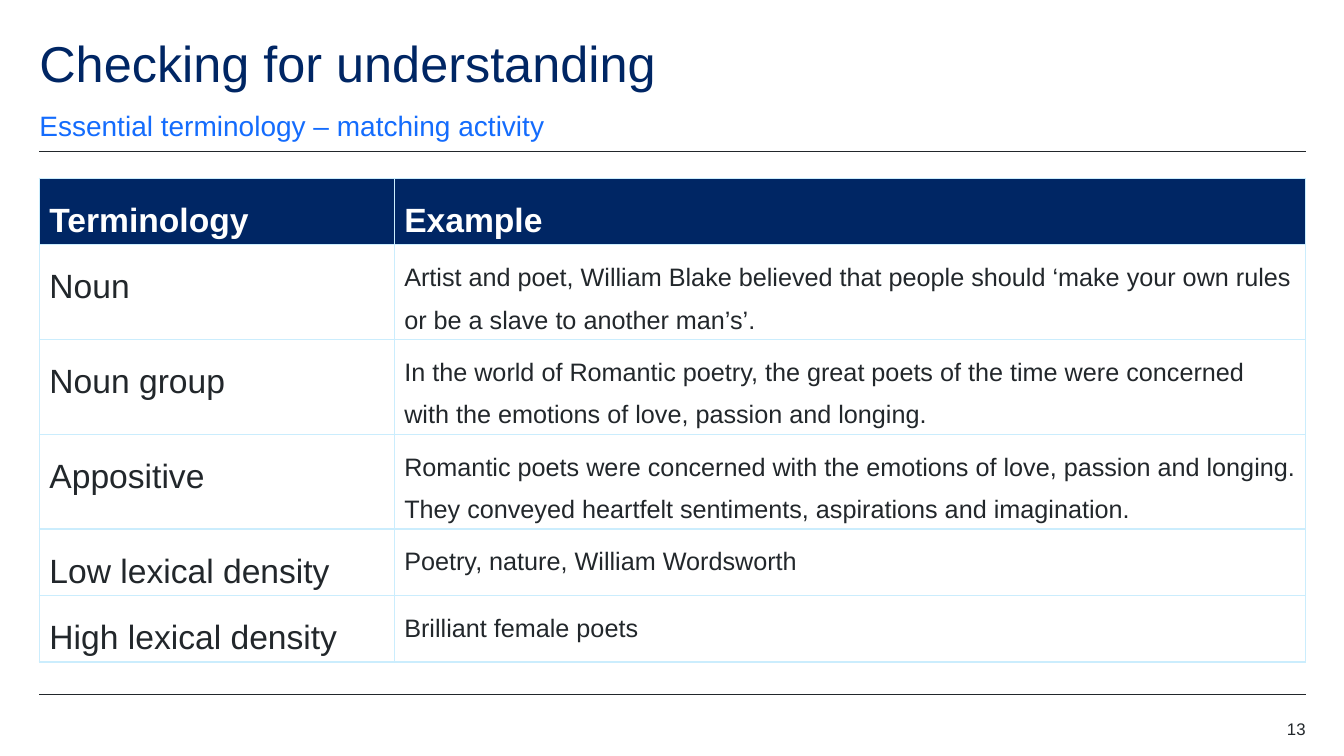
from dataclasses import dataclass

from lxml.etree import SubElement
from pptx import Presentation
from pptx.dml.color import RGBColor
from pptx.enum.text import MSO_ANCHOR, MSO_AUTO_SIZE, PP_ALIGN
from pptx.oxml.ns import qn
from pptx.util import Inches, Pt


@dataclass(frozen=True)
class Theme:
    """Colours, font and type sizes of the slide."""

    font: str = "Arial"
    navy: str = "002664"
    blue: str = "146CFD"
    ink: str = "22272B"
    white: str = "FFFFFF"
    border: str = "CBEDFD"
    title_size: int = 36
    term_size: int = 24
    subtitle_size: int = 20
    example_size: int = 18
    number_size: int = 12


THEME = Theme()
LEFT, WIDTH = 0.39, 12.56
TERM_WIDTH = 3.52
ROW_HEIGHTS = [0.65, 0.94, 0.94, 0.94, 0.66, 0.66]
TERMS = [
    ("Terminology", "Example"),
    ("Noun", "Artist and poet, William Blake believed that people should "
     "‘make your own rules or be a slave to another man’s’."),
    ("Noun group", "In the world of Romantic poetry, the great poets of the time "
     "were concerned with the emotions of love, passion and longing."),
    ("Appositive", "Romantic poets were concerned with the emotions of love, passion "
     "and longing. They conveyed heartfelt sentiments, aspirations and imagination."),
    ("Low lexical density", "Poetry, nature, William Wordsworth"),
    ("High lexical density", "Brilliant female poets"),
]


def write(frame, text, size, color, bold=False, align=PP_ALIGN.LEFT, spacing=None, after=0):
    """Fill a text frame with one formatted paragraph."""
    frame.text = text
    frame.word_wrap = True
    paragraph = frame.paragraphs[0]
    paragraph.alignment = align
    paragraph.line_spacing = spacing
    paragraph.space_before = Pt(0)
    paragraph.space_after = Pt(after)
    font = paragraph.font
    font.name, font.size, font.bold = THEME.font, Pt(size), bold
    font.color.rgb = RGBColor.from_string(color)


def clear_frame(frame, anchor):
    """Remove the insets and automatic sizing of a text frame."""
    frame.margin_left = frame.margin_right = frame.margin_top = frame.margin_bottom = 0
    frame.auto_size = MSO_AUTO_SIZE.NONE
    frame.vertical_anchor = anchor


def add_rule(slide, left, top, width):
    """Draw a thin horizontal rule."""
    rule = slide.shapes.add_connector(
        1, Inches(left), Inches(top), Inches(left + width), Inches(top))
    rule.line.color.rgb = RGBColor.from_string(THEME.ink)
    rule.line.width = Pt(0.5)
    SubElement(rule._element.spPr, qn("a:effectLst"))


def add_heading(slide, left, top, width):
    """Place the title, the subtitle and the rule below them."""
    title = slide.shapes.title
    title.left, title.top = Inches(left), Inches(top)
    title.width, title.height = Inches(11.02), Inches(0.6)
    clear_frame(title.text_frame, MSO_ANCHOR.TOP)
    write(title.text_frame, "Checking for understanding",
          THEME.title_size, THEME.navy, spacing=0.9)
    subtitle = slide.shapes.add_textbox(
        Inches(left), Inches(top + 0.68), Inches(11.02), Inches(0.34))
    clear_frame(subtitle.text_frame, MSO_ANCHOR.BOTTOM)
    write(subtitle.text_frame, "Essential terminology – matching activity",
          THEME.subtitle_size, THEME.blue, spacing=1.5, after=12)
    add_rule(slide, left, top + 1.11, width)


def add_borders(cell):
    """Draw a thin line on all four sides of a cell."""
    properties = cell._tc.get_or_add_tcPr()
    for side in ("lnL", "lnR", "lnT", "lnB"):
        line = SubElement(properties, qn(f"a:{side}"), w=str(Pt(1)))
        fill = SubElement(line, qn("a:solidFill"))
        SubElement(fill, qn("a:srgbClr"), val=THEME.border)


def add_terms_table(slide, left, top, width):
    """Build the table of terms and examples."""
    table = slide.shapes.add_table(
        len(TERMS), 2, Inches(left), Inches(top), Inches(width),
        Inches(sum(ROW_HEIGHTS))).table
    table.horz_banding = False
    table.columns[0].width = Inches(TERM_WIDTH)
    table.columns[1].width = Inches(width - TERM_WIDTH)
    for row_index, texts in enumerate(TERMS):
        table.rows[row_index].height = Inches(ROW_HEIGHTS[row_index])
        header = row_index == 0
        for column_index, text in enumerate(texts):
            cell = table.cell(row_index, column_index)
            add_borders(cell)
            if header:
                cell.fill.solid()
                cell.fill.fore_color.rgb = RGBColor.from_string(THEME.navy)
            else:
                cell.fill.background()
            cell.vertical_anchor = MSO_ANCHOR.MIDDLE if header else MSO_ANCHOR.TOP
            large = header or column_index == 0
            write(cell.text_frame, text,
                  THEME.term_size if large else THEME.example_size,
                  THEME.white if header else THEME.ink,
                  bold=header, spacing=1.5, after=6)


def add_footer(slide, left, top, width):
    """Place the closing rule and the slide number."""
    add_rule(slide, left, top, width)
    number_width = 0.79
    number = slide.shapes.add_textbox(
        Inches(left + width - number_width), Inches(top + 0.24),
        Inches(number_width), Inches(0.2))
    clear_frame(number.text_frame, MSO_ANCHOR.TOP)
    write(number.text_frame, "13", THEME.number_size, THEME.ink, align=PP_ALIGN.RIGHT)


def main():
    """Build and save the presentation."""
    presentation = Presentation()
    presentation.slide_width, presentation.slide_height = Inches(13.33), Inches(7.5)
    slide = presentation.slides.add_slide(presentation.slide_layouts[5])
    add_heading(slide, LEFT, 0.39, WIDTH)
    add_terms_table(slide, LEFT, 1.77, WIDTH)
    add_footer(slide, LEFT, 6.89, WIDTH)
    presentation.save("out.pptx")


if __name__ == "__main__":
    main()
